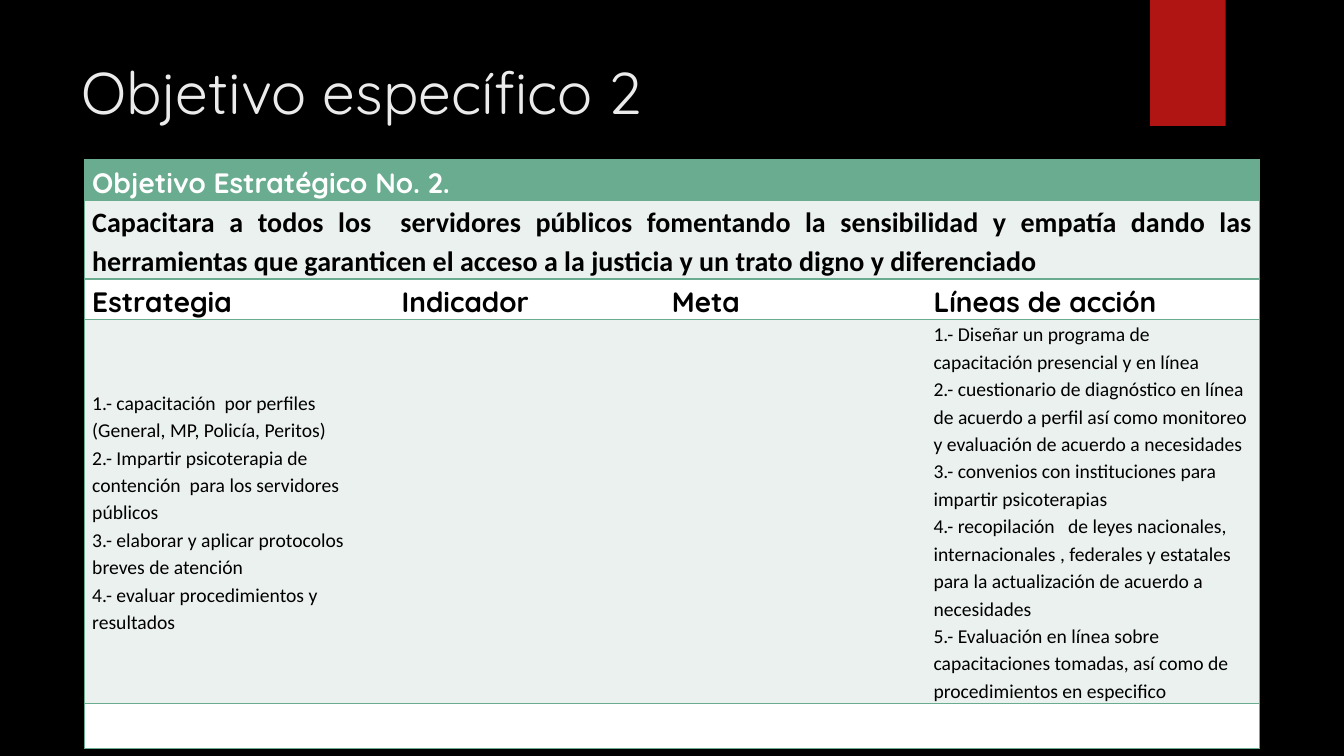
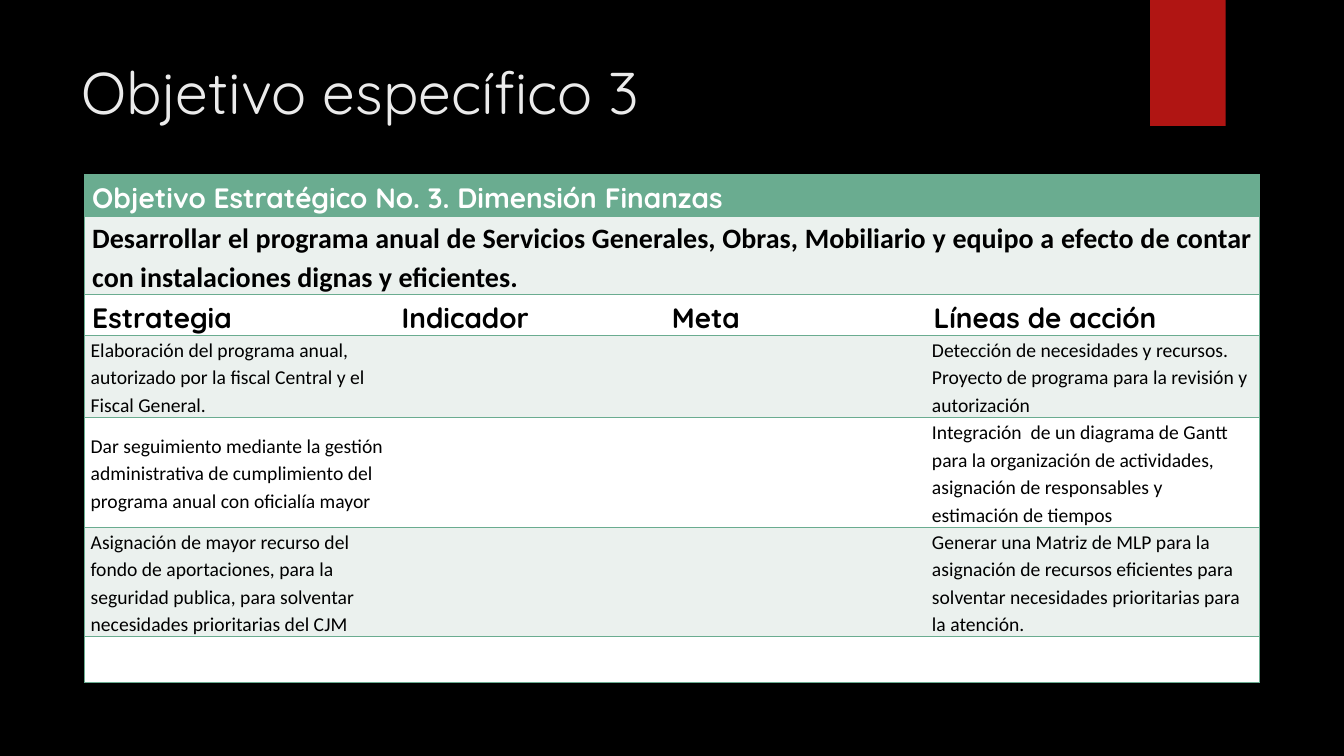
"""Build the strategic objective slides, each with one planning table."""
from lxml.etree import SubElement
from pptx import Presentation
from pptx.dml.color import RGBColor
from pptx.enum.shapes import MSO_SHAPE
from pptx.enum.text import MSO_ANCHOR, PP_ALIGN
from pptx.oxml.ns import qn
from pptx.util import Pt

BLACK = RGBColor(0x00, 0x00, 0x00)
WHITE = RGBColor(0xFF, 0xFF, 0xFF)
RED = RGBColor(0xB0, 0x15, 0x13)
GREEN = RGBColor(0x6A, 0xAC, 0x90)
PALE = RGBColor(0xEB, 0xF1, 0xEE)
TITLE_GREY = RGBColor(0xEB, 0xEB, 0xEB)

TITLE = {"name": "Quicksand", "size": Pt(42), "bold": False}
HEADING = {"name": "Quicksand", "size": Pt(20), "bold": True}
GOAL = {"name": "Calibri", "size": Pt(20), "bold": True}
BODY = {"name": "Calibri", "size": Pt(14), "bold": False}

TABLE_LEFT = 60.5
COL_WIDTHS = (221, 193, 187, 238.5)
HEADER_HEIGHTS = (29.5, 56, 29)
LAST_HEIGHT = 32.4
COLUMN_NAMES = ("Estrategia", "Indicador", "Meta", "Líneas de acción")

SLIDES = [
    {
        "title": "Objetivo específico 2",
        "top": 113.8,
        "inset": 5.4,
        "heading": "Objetivo Estratégico No. 2.",
        "goal": "Capacitara a todos los  servidores públicos fomentando la sensibilidad y empatía "
                "dando las herramientas que garanticen el acceso a la justicia y un trato digno y "
                "diferenciado",
        "rows": [
            (274,
             ["1.- capacitación  por perfiles (General, MP, Policía, Peritos)",
              "2.- Impartir psicoterapia de contención  para los servidores públicos",
              "3.- elaborar y aplicar protocolos breves de atención",
              "4.- evaluar procedimientos y resultados"],
             ["1.- Diseñar un programa de capacitación presencial y en línea",
              "2.- cuestionario de diagnóstico en línea de acuerdo a perfil así como monitoreo y "
              "evaluación de acuerdo a necesidades",
              "3.- convenios con instituciones para impartir psicoterapias",
              "4.- recopilación   de leyes nacionales, internacionales , federales y estatales "
              "para la actualización de acuerdo a necesidades",
              "5.- Evaluación en línea sobre capacitaciones tomadas, así como de procedimientos "
              "en especifico"]),
        ],
    },
    {
        "title": "Objetivo específico 3",
        "top": 125,
        "inset": 4.3,
        "heading": "Objetivo Estratégico No. 3. Dimensión Finanzas",
        "goal": "Desarrollar el programa anual de Servicios Generales, Obras, Mobiliario y equipo "
                "a efecto de contar con instalaciones dignas y eficientes.",
        "rows": [
            (58.8,
             ["Elaboración del programa anual, autorizado por la fiscal Central y el Fiscal "
              "General."],
             ["Detección de necesidades y recursos.",
              "Proyecto de programa para la revisión y autorización"]),
            (78.3,
             ["Dar seguimiento mediante la gestión administrativa de cumplimiento del programa "
              "anual con oficialía mayor"],
             ["Integración  de un diagrama de Gantt para la organización de actividades, "
              "asignación de responsables y estimación de tiempos"]),
            (78.3,
             ["Asignación de mayor recurso del fondo de aportaciones, para la seguridad publica, "
              "para solventar necesidades prioritarias del CJM"],
             ["Generar una Matriz de MLP para la asignación de recursos eficientes para solventar "
              "necesidades prioritarias para la atención."]),
        ],
    },
]


def write(tf, lines, fmt, color, **para):
    """Write one paragraph per line with the given formats."""
    for i, line in enumerate(lines):
        p = tf.paragraphs[0] if i == 0 else tf.add_paragraph()
        for name, value in para.items():
            setattr(p, name, value)
        r = p.add_run()
        r.text = line
        for name, value in fmt.items():
            setattr(r.font, name, value)
        r.font.color.rgb = color


def add_frame(s, title):
    """Add the background, the red tab and the title."""
    s.background.fill.solid()
    s.background.fill.fore_color.rgb = BLACK
    sp = s.shapes.add_shape(MSO_SHAPE.RECTANGLE, Pt(821.5), 0, Pt(54), Pt(90))
    sp.shadow.inherit = False
    sp.fill.solid()
    sp.fill.fore_color.rgb = RED
    sp.line.fill.background()
    tf = s.shapes.add_textbox(Pt(51), Pt(36), Pt(741), Pt(110)).text_frame
    tf.word_wrap = True
    write(tf, [title], TITLE, TITLE_GREY)


def set_borders(cell, sides):
    """Draw green lines on the named sides and none on the others."""
    tc_pr = cell._tc.get_or_add_tcPr()
    for i, side in enumerate("LRTB"):
        ln = SubElement(tc_pr, qn(f"a:ln{side}"), w=str(Pt(1)))
        if side in sides:
            fill = SubElement(ln, qn("a:solidFill"))
            SubElement(fill, qn("a:srgbClr"), val=str(GREEN))
        else:
            SubElement(ln, qn("a:noFill"))
        tc_pr.insert(i, ln)


def style_cell(cell, fill, sides, inset):
    """Set the fill, borders, insets and anchor of a cell."""
    formats = {"margin_left": Pt(inset), "margin_right": Pt(inset), "margin_top": 0,
               "margin_bottom": 0, "vertical_anchor": MSO_ANCHOR.MIDDLE}
    for name, value in formats.items():
        setattr(cell, name, value)
    cell.fill.solid()
    cell.fill.fore_color.rgb = fill
    set_borders(cell, sides)


def add_plan_table(s, plan):
    """Add the table of strategies and lines of action."""
    heights = [*HEADER_HEIGHTS, *(row[0] for row in plan["rows"]), LAST_HEIGHT]
    last = len(COL_WIDTHS) - 1
    table = s.shapes.add_table(len(heights), len(COL_WIDTHS), Pt(TABLE_LEFT), Pt(plan["top"]),
                               Pt(sum(COL_WIDTHS)), Pt(sum(heights))).table
    table.first_row = table.horz_banding = False
    for col, width in zip(table.columns, COL_WIDTHS):
        col.width = Pt(width)
    for i, height in enumerate(heights):
        table.rows[i].height = Pt(height)
        fill = GREEN if i == 0 else PALE if i % 2 else WHITE
        inset = plan["inset"] if i >= len(HEADER_HEIGHTS) else 5.4
        for j in range(last + 1):
            sides = "TB" + ("L" if j == 0 or i < 2 else "") + ("R" if j == last or i < 2 else "")
            style_cell(table.cell(i, j), fill, sides, inset)
    for i in range(2):
        table.cell(i, 0).merge(table.cell(i, last))

    def put(i, j, lines, fmt, color=BLACK, **para):
        """Write lines in one cell."""
        write(table.cell(i, j).text_frame, lines, fmt, color, line_spacing=1.15, **para)

    put(0, 0, [plan["heading"]], HEADING, WHITE)
    put(1, 0, [plan["goal"]], GOAL, alignment=PP_ALIGN.JUSTIFY)
    for j, name in enumerate(COLUMN_NAMES):
        put(2, j, [name], HEADING)
    for i, (_, strategies, actions) in enumerate(plan["rows"], len(HEADER_HEIGHTS)):
        put(i, 0, strategies, BODY)
        put(i, last, actions, BODY)


def main():
    """Build and save the presentation."""
    prs = Presentation()
    prs.slide_width, prs.slide_height = Pt(960), Pt(540)
    for plan in SLIDES:
        s = prs.slides.add_slide(prs.slide_layouts[6])
        add_frame(s, plan["title"])
        add_plan_table(s, plan)
    prs.save("out.pptx")


if __name__ == "__main__":
    main()
